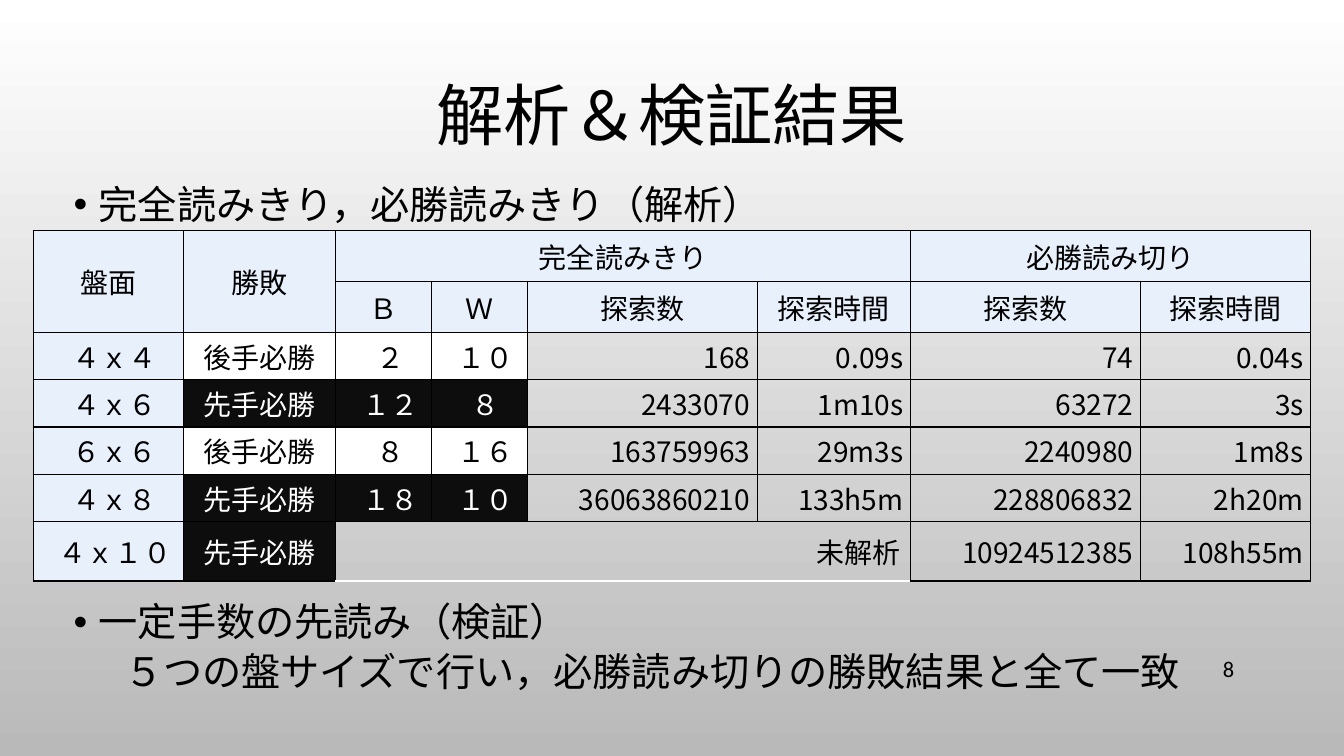
from lxml.etree import SubElement
from pptx import Presentation
from pptx.dml.color import RGBColor
from pptx.enum.text import MSO_ANCHOR, MSO_AUTO_SIZE, PP_ALIGN
from pptx.oxml import parse_xml
from pptx.oxml.ns import nsdecls, qn
from pptx.util import Emu, Inches, Pt

JAPANESE = "Noto Sans CJK JP"
BLACK, WHITE, INK, HEADER = "000000", "FFFFFF", "0D0D0D", "E8F0FC"
SLIDE_WIDTH, SLIDE_HEIGHT = Inches(13.33), Inches(7.5)

COLUMN_SHARES = [1.49, 1.51, 0.95, 0.95, 2.28, 1.52, 2.28, 1.69]
ROW_SHARES = [0.47] * 6 + [0.59]
HEADINGS = [
    ["盤面", "勝敗", "完全読みきり", "", "", "", "必勝読み切り", ""],
    ["", "", "Ｂ", "Ｗ", "探索数", "探索時間", "探索数", "探索時間"],
]
RESULTS = [
    ["４ｘ４", "後手必勝", "２", "１０", "168", "0.09s", "74", "0.04s"],
    ["４ｘ６", "先手必勝", "１２", "８", "2433070", "1m10s", "63272", "3s"],
    ["６ｘ６", "後手必勝", "８", "１６", "163759963", "29m3s", "2240980", "1m8s"],
    ["４ｘ８", "先手必勝", "１８", "１０", "36063860210", "133h5m", "228806832", "2h20m"],
    ["４ｘ１０", "先手必勝", "未解析", "", "", "", "10924512385", "108h55m"],
]
MERGES = [(0, 0, 1, 0), (0, 1, 1, 1), (0, 2, 0, 5), (0, 6, 0, 7), (6, 2, 6, 5)]


def color(hex_code):
    return RGBColor.from_string(hex_code)


def percent_box(left, top, width, height):
    return (
        Emu(int(SLIDE_WIDTH * left / 100)),
        Emu(int(SLIDE_HEIGHT * top / 100)),
        Emu(int(SLIDE_WIDTH * width / 100)),
        Emu(int(SLIDE_HEIGHT * height / 100)),
    )


def move(part, box):
    part.left, part.top, part.width, part.height = box


def style_runs(paragraph, size, hex_code=BLACK, typeface=JAPANESE):
    for run in paragraph.runs:
        run.font.size = Pt(size)
        run.font.color.rgb = color(hex_code)
        run.font.name = typeface
        SubElement(run.font._element, qn("a:ea")).set("typeface", typeface)


def indent(paragraph, margin, first_line):
    properties = paragraph._p.get_or_add_pPr()
    properties.set("marL", str(Inches(margin)))
    properties.set("indent", str(Inches(first_line)))
    return properties


def paint_background(slide):
    fill = slide.background.fill
    fill.gradient()
    fill.gradient_angle = 270
    for stop, hex_code, position in zip(fill.gradient_stops, (WHITE, "B9B9B9"), (0, 1)):
        stop.color.rgb = color(hex_code)
        stop.position = position


def place_title(title, box):
    move(title, box)
    frame = title.text_frame
    frame.text = "解析＆検証結果"
    frame.auto_size = MSO_AUTO_SIZE.NONE
    frame.vertical_anchor = MSO_ANCHOR.MIDDLE
    heading = frame.paragraphs[0]
    heading.alignment = PP_ALIGN.CENTER
    heading.line_spacing = 0.9
    style_runs(heading, 48)


def place_list(body, box, lines, spacing):
    move(body, box)
    frame = body.text_frame
    frame.text = "\n".join(lines)
    frame.word_wrap = True
    frame.auto_size = MSO_AUTO_SIZE.NONE
    frame.vertical_anchor = MSO_ANCHOR.TOP
    for level, paragraph in enumerate(frame.paragraphs):
        paragraph.level = level
        paragraph.line_spacing = spacing
        paragraph.space_before = Pt(5 * level)
        if level:
            SubElement(indent(paragraph, 0.5, 0), qn("a:buNone"))
        else:
            properties = indent(paragraph, 0.25, -0.25)
            SubElement(properties, qn("a:buFont")).set("typeface", "Arial")
            SubElement(properties, qn("a:buChar")).set("char", "•")
        style_runs(paragraph, 28)


def draw_borders(cell, bottom):
    properties = cell._tc.get_or_add_tcPr()
    edges = {"lnL": BLACK, "lnR": BLACK, "lnT": BLACK, "lnB": bottom}
    for order, (edge, hex_code) in enumerate(edges.items()):
        properties.insert(order, parse_xml(
            f'<a:{edge} {nsdecls("a")} w="12700"><a:solidFill>'
            f'<a:srgbClr val="{hex_code}"/></a:solidFill></a:{edge}>'
        ))


def cell_fill(row, column, winner):
    if row < len(HEADINGS) or column == 0:
        return HEADER
    unsolved = row == len(ROW_SHARES) - 1 and column > 1
    if column > 3 or unsolved:
        return None
    return INK if winner == "先手必勝" else WHITE


def fill_cell(cell, text, row, column, winner):
    unsolved = row == len(ROW_SHARES) - 1 and 2 <= column <= 5
    fill = cell_fill(row, column, winner)
    if fill:
        cell.fill.solid()
        cell.fill.fore_color.rgb = color(fill)
    else:
        cell.fill.background()
    draw_borders(cell, WHITE if unsolved else BLACK)
    cell.vertical_anchor = MSO_ANCHOR.MIDDLE
    if not text:
        return
    cell.text_frame.text = text
    entry = cell.text_frame.paragraphs[0]
    entry.alignment = PP_ALIGN.CENTER
    if row >= len(HEADINGS):
        indent(entry, 0, 0.13)
        if column == 1:
            entry.alignment = PP_ALIGN.LEFT
        elif column > 3 or unsolved:
            entry.alignment = PP_ALIGN.RIGHT
        if not unsolved:
            cell.margin_left = cell.margin_right = Inches(0.07)
            cell.margin_top = cell.margin_bottom = 0
    style_runs(entry, 20, WHITE if fill == INK else BLACK)


def place_results(slide, box):
    entries = HEADINGS + RESULTS
    results = slide.shapes.add_table(len(entries), len(COLUMN_SHARES), *box).table
    results.first_row = results.horz_banding = False
    width, height = box[2:]
    for column, share in zip(results.columns, COLUMN_SHARES):
        column.width = Emu(int(width * share / sum(COLUMN_SHARES)))
    for row, share in zip(results.rows, ROW_SHARES):
        row.height = Emu(int(height * share / sum(ROW_SHARES)))
    for top, left, bottom, right in MERGES:
        results.cell(top, left).merge(results.cell(bottom, right))
    for row, texts in enumerate(entries):
        for column, text in enumerate(texts):
            fill_cell(results.cell(row, column), text, row, column, texts[1])


def place_page_number(slide, box):
    frame = slide.shapes.add_textbox(*box).text_frame
    frame.text = "8"
    frame.word_wrap = True
    frame.vertical_anchor = MSO_ANCHOR.MIDDLE
    number = frame.paragraphs[0]
    number.alignment = PP_ALIGN.RIGHT
    style_runs(number, 16, typeface="Calibri")


def build_results_slide(deck):
    slide = deck.slides.add_slide(deck.slide_layouts.get_by_name("Two Content"))
    analysis, verification = slide.placeholders[1], slide.placeholders[2]
    paint_background(slide)
    place_title(slide.shapes.title, percent_box(7.5, 4.13, 85, 23.2))
    place_list(analysis, percent_box(4.73, 22, 56.2, 10.93),
               ["完全読みきり，必勝読みきり（解析）"], 1.2)
    place_results(slide, percent_box(2.48, 30.53, 95.05, 45.4))
    place_list(verification, percent_box(4.73, 79.07, 92.8, 18.27),
               ["一定手数の先読み（検証）",
                "５つの盤サイズで行い，必勝読み切りの勝敗結果と全て一致"], 0.9)
    place_page_number(slide, percent_box(86.27, 85.73, 6.3, 5.33))


def main():
    deck = Presentation()
    deck.slide_width, deck.slide_height = SLIDE_WIDTH, SLIDE_HEIGHT
    build_results_slide(deck)
    deck.save("out.pptx")


if __name__ == "__main__":
    main()
